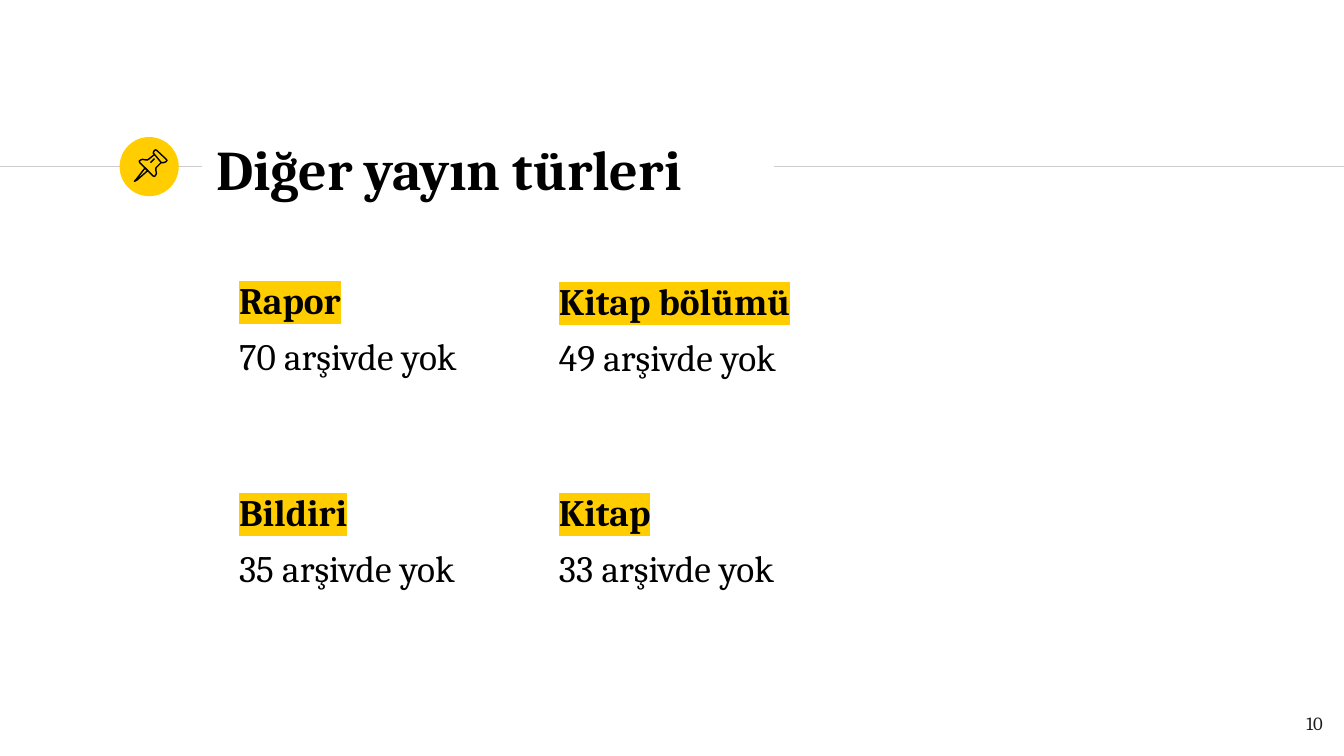
import pptx
import pptx.dml.color
import pptx.enum.shapes
import pptx.enum.text
import pptx.oxml
import pptx.oxml.ns
import pptx.util
from lxml import etree

Inches, Pt = pptx.util.Inches, pptx.util.Pt
ALIGN = pptx.enum.text.PP_ALIGN
ANCHOR = pptx.enum.text.MSO_ANCHOR

YELLOW = pptx.dml.color.RGBColor(0xFF, 0xCD, 0x00)
BLACK = pptx.dml.color.RGBColor(0x00, 0x00, 0x00)
INK = pptx.dml.color.RGBColor(0x1D, 0x1D, 0x1B)
GREY = pptx.dml.color.RGBColor(0xCC, 0xCC, 0xCC)
FONT = "Cambria"

# Widescreen slide, 16:9
WIDTH = 10
deck = pptx.Presentation()
deck.slide_width, deck.slide_height = Inches(WIDTH), Inches(WIDTH * 9 / 16)
slide = deck.slides.add_slide(deck.slide_layouts[6])


def add_frame(left, top, width, height, anchor=ANCHOR.TOP):
    box = slide.shapes.add_textbox(*map(Inches, (left, top, width, height)))
    frame = box.text_frame
    frame.word_wrap = True
    frame.vertical_anchor = anchor
    frame.margin_left = frame.margin_right = Inches(0.1)
    frame.margin_top = frame.margin_bottom = Inches(0.1)
    return frame


def add_run(paragraph, text, size, color=BLACK, bold=False, highlight=None):
    run = paragraph.add_run()
    run.text = text
    run.font.size, run.font.bold, run.font.name = Pt(size), bold, FONT
    run.font.color.rgb = color
    if highlight is not None:
        marker = pptx.oxml.parse_xml(
            f'<a:highlight {pptx.oxml.ns.nsdecls("a")}>'
            f'<a:srgbClr val="{highlight}"/></a:highlight>')
        run.font.fill._xPr.find(pptx.oxml.ns.qn("a:solidFill")).addnext(marker)


# Rule on both sides of the title
RULE_Y = 1.24
for start, end in ((0, 1.5), (5.76, WIDTH)):
    rule = slide.shapes.add_connector(
        pptx.enum.shapes.MSO_CONNECTOR.STRAIGHT,
        Inches(start), Inches(RULE_Y), Inches(end), Inches(RULE_Y))
    rule.line.color.rgb, rule.line.width = GREY, Pt(0.75)
    etree.SubElement(rule._element.spPr, pptx.oxml.ns.qn("a:effectLst"))

# Yellow badge centred on the rule
BADGE = 0.44
badge = slide.shapes.add_shape(
    pptx.enum.shapes.MSO_SHAPE.OVAL, Inches(0.89), Inches(RULE_Y - BADGE / 2),
    Inches(BADGE), Inches(BADGE))
badge.shadow.inherit = False
badge.fill.solid()
badge.fill.fore_color.rgb = YELLOW
badge.line.fill.background()

# Title
title = add_frame(1.51, 1.01, 4.24, 0.48, ANCHOR.MIDDLE)
add_run(title.paragraphs[0], "Diğer yayın türleri", 30, bold=True)

# Pushpin in the badge, in thousandths of an inch: needle, head, body, glint
pin_strokes = (
    ([(1080, 1250), (1010, 1340), (1000, 1350), (1020, 1340), (1100, 1270)], True),
    ([(1150, 1150), (1200, 1210), (1220, 1210), (1235, 1203), (1242, 1195),
      (1240, 1188), (1165, 1118), (1155, 1115), (1145, 1125), (1140, 1140)], True),
    ([(1150, 1150), (1100, 1190), (1080, 1190), (1060, 1186), (1045, 1192),
      (1036, 1200), (1040, 1210), (1140, 1310), (1150, 1313), (1158, 1305),
      (1164, 1290), (1160, 1270), (1160, 1250), (1200, 1210)], False),
    ([(1120, 1210), (1150, 1180)], False),
)
for points, closed in pin_strokes:
    builder = slide.shapes.build_freeform(*points[0], scale=Inches(1) / 1000)
    builder.add_line_segments(points[1:], close=closed)
    stroke = builder.convert_to_shape()
    stroke.shadow.inherit = False
    stroke.fill.background()
    stroke.line.color.rgb, stroke.line.width = BLACK, Pt(0.75)

# Publication types on a grid of two columns and two rows
COLUMNS, ROWS = (1.68, 4.06), (1.96, 3.54)
publications = (
    (("Rapor", "70 arşivde yok"), ("Kitap bölümü", "49 arşivde yok")),
    (("Bildiri", "35 arşivde yok"), ("Kitap", "33 arşivde yok")),
)
for top, row in zip(ROWS, publications):
    for left, (kind, missing) in zip(COLUMNS, row):
        # The chapter heading sits slightly lower than its neighbour
        nudge = 0.01 if kind == "Kitap bölümü" else 0
        entry = add_frame(left, top + nudge, 2.55, 1.32)
        heading, detail = entry.paragraphs[0], entry.add_paragraph()
        heading.space_before = detail.space_before = Pt(6)
        add_run(heading, kind, 20, bold=True, highlight=YELLOW)
        add_run(detail, missing, 20)

# Page number
page_number = add_frame(9.34, 5.21, 0.6, 0.43).paragraphs[0]
page_number.alignment = ALIGN.RIGHT
add_run(page_number, "10", 10, INK)

deck.save("out.pptx")
